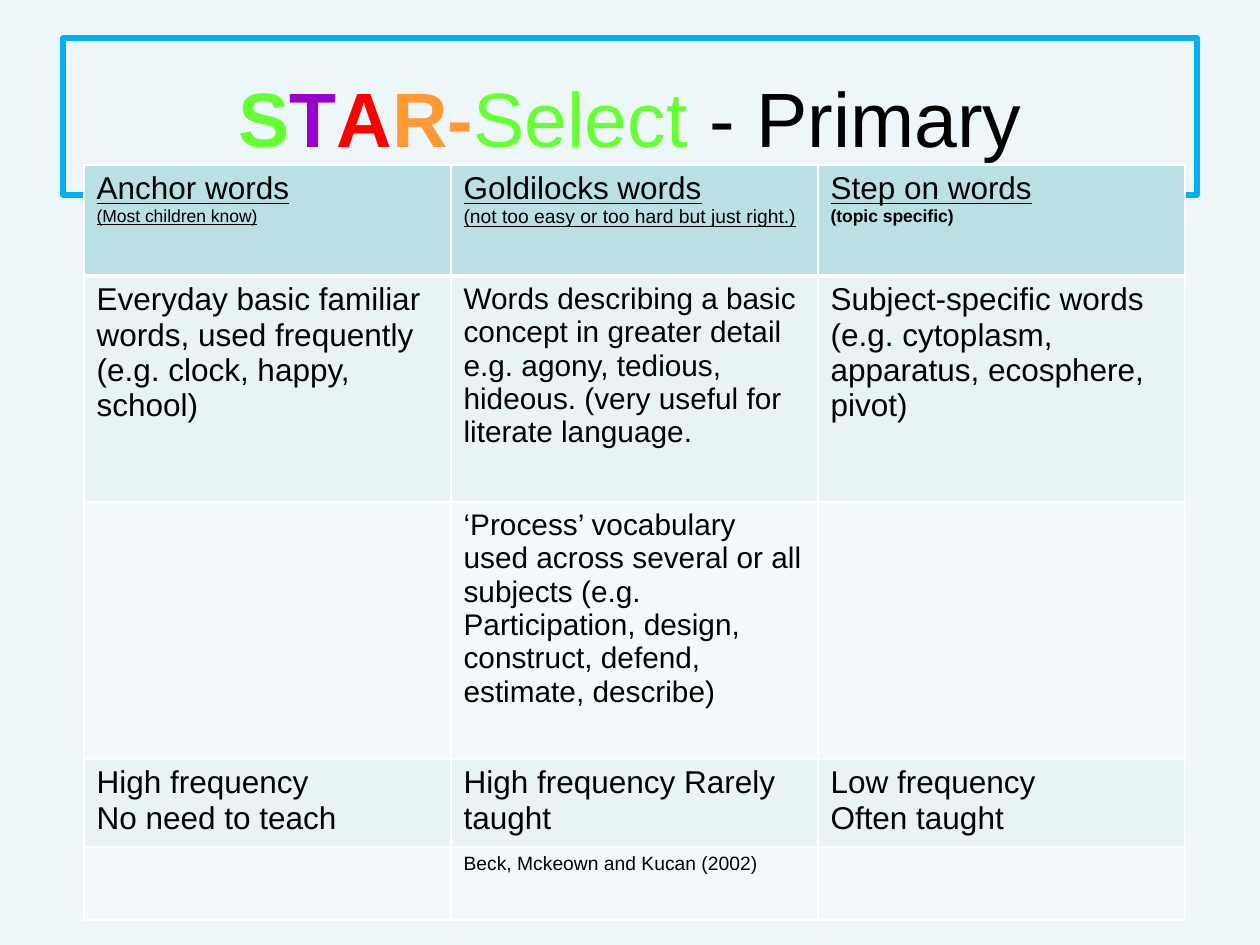
"""Builds the STAR vocabulary selection slide."""
from lxml import etree
from pptx import Presentation, util as u
from pptx.dml.color import RGBColor
from pptx.enum import text
from pptx.oxml.ns import qn

BLACK, WHITE = "000000", "FFFFFF"
TITLE = [("S", "66FF33", True), ("T", "9900CC", True), ("A", "FF0000", True),
         ("R-", "FF9933", True), ("Select", "66FF33", False),
         (" - Primary", BLACK, False)]
BOX = (63, 38, 1134, 157)
GRID = (84, 165)
COL = 367
ROWS = [
    (111, "BBE0E3", [
        [("Anchor words", 18, "u"), ("(Most children know)", 10, "u")],
        [("Goldilocks words", 18, "u"),
         ("(not too easy or too hard but just right.)", 11, "u")],
        [("Step on words", 18, "u"), ("(topic specific)", 10, "b")]]),
    (226, "E7F3F4", [
        [("Everyday basic familiar words, used frequently "
          "(e.g. clock, happy, school)", 18, "")],
        [("Words describing a basic concept in greater detail e.g. agony, "
          "tedious, hideous. (very useful for literate language.", 17, "")],
        [("Subject-specific words (e.g. cytoplasm, apparatus, ecosphere, "
          "pivot)", 18, "")]]),
    (257, "F3F9FA", [
        [],
        [("‘Process’ vocabulary used across several or all subjects (e.g. "
          "Participation, design, construct, defend, estimate, describe)",
          17, "")],
        []]),
    (88, "E7F3F4", [
        [("High frequency", 18, ""), ("No need to teach", 18, "")],
        [("High frequency Rarely taught", 18, "")],
        [("Low frequency", 18, ""), ("Often taught", 18, "")]]),
    (73, "F3F9FA", [
        [], [("Beck, Mckeown and Kucan (2002)", 11, "")], []]),
]


def px(n):
    return round(n * 914400 / 126)


def rgb(code):
    return RGBColor.from_string(code)


def paint(fill, code):
    fill.solid()
    fill.fore_color.rgb = rgb(code)


def add_run(para, words, size, color=BLACK, bold=False, under=False):
    run = para.add_run()
    run.text = words
    font = run.font
    font.name, font.size = "Arial", u.Pt(size)
    font.bold, font.underline = bold, under
    font.color.rgb = rgb(color)


def edge(cell, widths):
    props = cell._tc.get_or_add_tcPr()
    for spot, (side, width) in enumerate(widths.items()):
        line = etree.Element(qn("a:ln" + side), w=str(u.Pt(width)))
        fill = etree.SubElement(line, qn("a:solidFill"))
        etree.SubElement(fill, qn("a:srgbClr"), val=WHITE)
        props.insert(spot, line)


def add_title(slide):
    title = slide.shapes.title
    title.left, title.top, title.width, title.height = map(px, BOX)
    title.line.color.rgb = rgb("00B0F0")
    title.line.width = u.Pt(3)
    frame = title.text_frame
    frame.auto_size = text.MSO_AUTO_SIZE.NONE
    frame.vertical_anchor = text.MSO_ANCHOR.MIDDLE
    para = frame.paragraphs[0]
    para.alignment = text.PP_ALIGN.CENTER
    for words, color, bold in TITLE:
        add_run(para, words, 44, color, bold)


def add_grid(slide):
    high = sum(row[0] for row in ROWS)
    table = slide.shapes.add_table(
        len(ROWS), 3, *map(px, (*GRID, 3 * COL, high))).table
    for col in table.columns:
        col.width = px(COL)
    for r, (tall, color, cells) in enumerate(ROWS):
        table.rows[r].height = px(tall)
        for c, lines in enumerate(cells):
            cell = table.cell(r, c)
            paint(cell.fill, color)
            edge(cell, {"L": 1, "R": 1, "T": 3 if r == 1 else 1,
                        "B": 3 if r == 0 else 1})
            frame = cell.text_frame
            for i, (words, size, style) in enumerate(lines):
                para = frame.add_paragraph() if i else frame.paragraphs[0]
                add_run(para, words, size, bold=style == "b",
                        under=style == "u")


def main():
    deck = Presentation()
    deck.slide_width, deck.slide_height = px(1260), px(945)
    slide = deck.slides.add_slide(deck.slide_layouts[5])
    paint(slide.background.fill, "EDF6F8")
    add_title(slide)
    add_grid(slide)
    deck.save("out.pptx")


if __name__ == "__main__":
    main()
